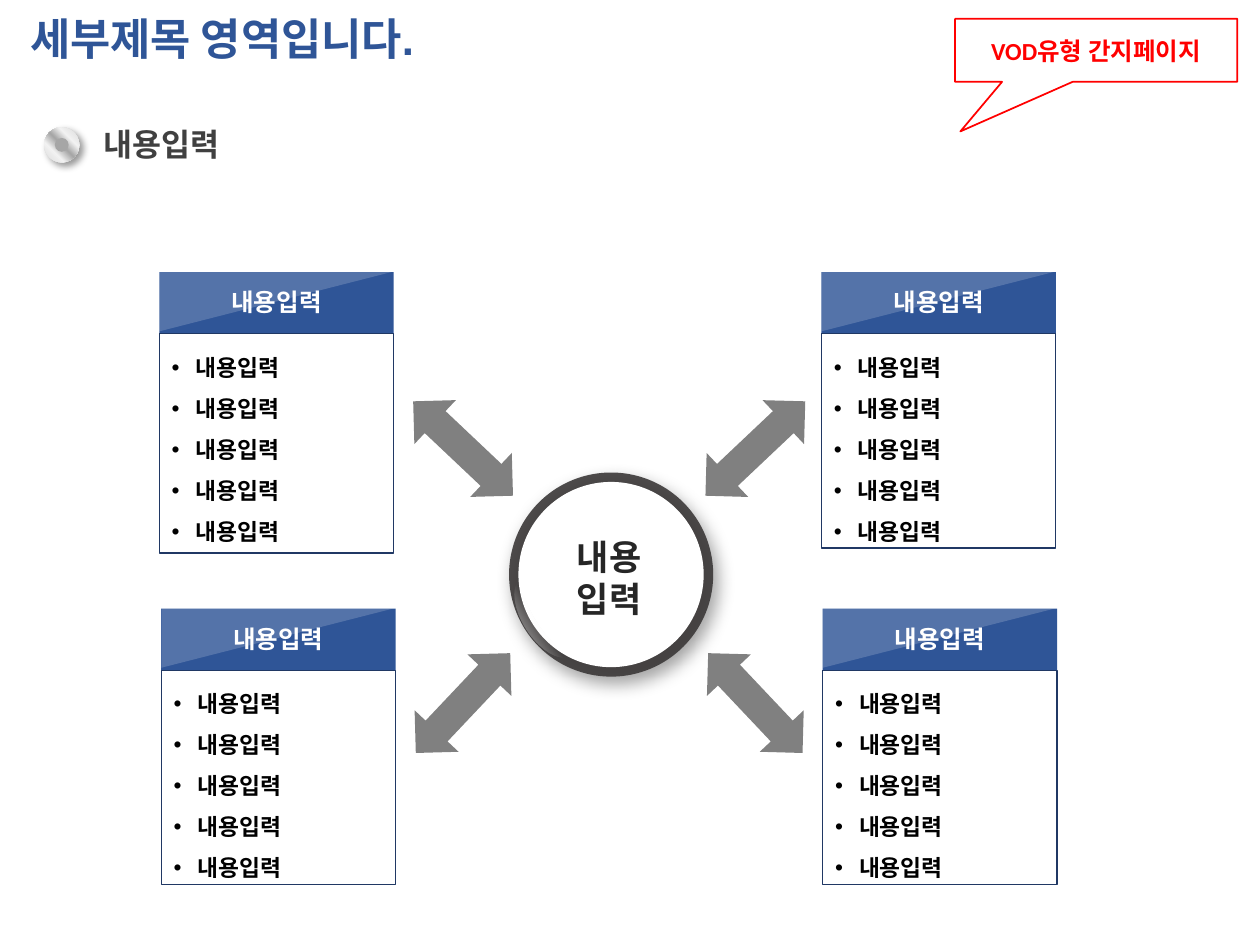
import pptx
import pptx.util
import pptx.dml.color
import pptx.enum.shapes
import pptx.enum.text
import pptx.oxml
import pptx.oxml.ns
from lxml import etree

SHAPE = pptx.enum.shapes.MSO_SHAPE
ALIGN = pptx.enum.text.PP_ALIGN
ANCHOR = pptx.enum.text.MSO_ANCHOR
qn = pptx.oxml.ns.qn
NSDECL = pptx.oxml.ns.nsdecls("a")

prs = pptx.Presentation()
prs.slide_width = pptx.util.Inches(10)
prs.slide_height = pptx.util.Inches(7.5)
COL = prs.slide_width / 100
ROW = prs.slide_height / 75

NAVY, GREY, WHITE = "2F5597", "808080", "FFFFFF"
LABEL = "내용입력"


def color(value):
    return pptx.dml.color.RGBColor.from_string(value)


def place(box):
    """Turn a box in grid columns and rows into slide lengths."""
    x, y, w, h = box
    return round(x * COL), round(y * ROW), round(w * COL), round(h * ROW)


def add_shape(s, kind, box, fill=None, line=None, width=1, alpha=None, rotation=0):
    sp = s.shapes.add_shape(kind, *place(box))
    sp.shadow.inherit = False
    sp.rotation = rotation
    if fill:
        sp.fill.solid()
        sp.fill.fore_color.rgb = color(fill)
    if alpha is not None:
        clr = sp.fill._xPr.find(qn("a:solidFill"))[0]
        etree.SubElement(clr, qn("a:alpha")).set("val", str(alpha * 1000))
    if line:
        sp.line.color.rgb = color(line)
        sp.line.width = pptx.util.Pt(width)
    else:
        sp.line.fill.background()
    return sp


def gradient(sp, stops, angle):
    """Fill with (position, colour, opacity) stops, all in percent."""
    gs = "".join(
        f'<a:gs pos="{pos * 1000}"><a:srgbClr val="{c}"><a:alpha val="{a * 1000}"/>'
        "</a:srgbClr></a:gs>" for pos, c, a in stops)
    new = pptx.oxml.parse_xml(
        f'<a:gradFill {NSDECL} rotWithShape="1"><a:gsLst>{gs}</a:gsLst>'
        f'<a:lin ang="{angle * 60000}" scaled="0"/></a:gradFill>')
    sp._element.spPr.find(qn("a:prstGeom")).addnext(new)


def drop_shadow(sp, blur, distance, angle):
    effects = sp._element.spPr.find(qn("a:effectLst"))
    effects.append(pptx.oxml.parse_xml(
        f'<a:outerShdw {NSDECL} blurRad="{blur * 12700}" dist="{distance * 12700}" '
        f'dir="{angle * 60000}" algn="ctr" rotWithShape="0"><a:srgbClr val="000000">'
        '<a:alpha val="40000"/></a:srgbClr></a:outerShdw>'))


def write(sp, lines, size, name, ink, anchor=ANCHOR.TOP, wrap=True, bullet=False, **formats):
    tf = sp.text_frame
    tf.word_wrap = wrap
    tf.auto_size = pptx.enum.text.MSO_AUTO_SIZE.NONE
    tf.vertical_anchor = anchor
    font = {"size": pptx.util.Pt(size), "name": name, "bold": True}
    for i, text in enumerate(lines):
        p = tf.paragraphs[0] if i == 0 else tf.add_paragraph()
        for key, value in formats.items():
            setattr(p, key, value)
        if bullet:
            pPr = p._p.get_or_add_pPr()
            indent = pptx.util.Inches(0.19)
            pPr.set("marL", str(indent))
            pPr.set("indent", str(-indent))
            etree.SubElement(pPr, qn("a:buFont")).set("typeface", "Arial")
            etree.SubElement(pPr, qn("a:buChar")).set("char", "•")
        r = p.add_run()
        r.text = text
        for key, value in font.items():
            setattr(r.font, key, value)
        r.font.color.rgb = color(ink)


def add_text(s, box, *args, **formats):
    write(s.shapes.add_textbox(*place(box)), *args, **formats)


def title(s, box):
    sp = s.shapes.title
    sp.left, sp.top, sp.width, sp.height = place(box)
    write(sp, ["세부제목 영역입니다."], 25, "Arial", NAVY, anchor=ANCHOR.MIDDLE,
          alignment=ALIGN.LEFT, line_spacing=0.9)


def hub(s, box):
    x, y, w, h = box
    ring = add_shape(s, SHAPE.OVAL, box, "3B3838", alpha=90)
    drop_shadow(ring, 10, 5, 60)
    rim = 0.75
    add_shape(s, SHAPE.OVAL, (x + rim, y + rim, w - 2 * rim, h - 2 * rim), WHITE)
    moon = add_shape(s, SHAPE.MOON, (x + 1.2, y + 8.3, 1.9, 7.3), rotation=327.5)
    moon.adjustments[0] = 0.535
    gradient(moon, [(0, WHITE, 100), (54, WHITE, 0)], 0)
    add_text(s, (x + 1.1, y + 4.5, w - 2.5, 7.7), ["내용", "입력"], 20, "Arial", "262626",
             alignment=ALIGN.CENTER)


def card(s, box):
    """Header bar with a diagonal gloss over a bulleted list."""
    x, y, w, h = box
    head = 4.9
    add_shape(s, SHAPE.RECTANGLE, (x, y, w, head), NAVY)
    long, short = w - 0.2, head - 0.2
    add_shape(s, SHAPE.RIGHT_TRIANGLE,
              (x + (long - short) / 2, y + (short - long) / 2, short, long),
              WHITE, alpha=18, rotation=90)
    add_text(s, (x - 0.2, y + 0.7, w + 0.4, 3.4), [LABEL], 14, "Calibri", WHITE,
             alignment=ALIGN.CENTER, space_after=pptx.util.Pt(6))
    body = add_shape(s, SHAPE.RECTANGLE, (x, y + head, w, h - head), WHITE, "203864", 0.75)
    write(body, [LABEL] * 5, 13, "Arial", "000000", bullet=True,
          alignment=ALIGN.LEFT, line_spacing=1.5)


def arrows(s, box):
    """Four double arrows in the corners of the box, pointing at its middle."""
    x, y, w, h = box
    long, thick = 10.9, 4.8
    for dx, dy, angle in ((0, 0, 43.4), (1, 0, -43.4), (0, 1, -46.6), (1, 1, 46.6)):
        add_shape(s, SHAPE.LEFT_RIGHT_ARROW,
                  (x + dx * (w - long), y + dy * (h - thick), long, thick),
                  GREY, rotation=angle)


def section_heading(s, box):
    x, y, w, h = box
    disc = add_shape(s, SHAPE.OVAL, (x, y + 0.7, 2.8, 2.8))
    gradient(disc, [(0, "D9D9D9", 100), (30, "F2F2F2", 100), (50, "A6A6A6", 100),
                    (70, "F2F2F2", 100), (100, "D9D9D9", 100)], 315)
    drop_shadow(disc, 4, 3, 45)
    add_shape(s, SHAPE.OVAL, (x + 0.85, y + 1.55, 1.1, 1.1), "A6A6A6")
    add_text(s, (x + 3.7, y, w - 3.7, h), [LABEL], 18, "Arial", "404040", wrap=False)


def callout(s, box):
    sp = add_shape(s, SHAPE.RECTANGULAR_CALLOUT, box, WHITE, "FF0000", 1)
    sp.adjustments[0], sp.adjustments[1] = -0.481, 1.287
    write(sp, ["VOD유형 간지페이지"], 14, "Calibri", "FF0000", anchor=ANCHOR.MIDDLE,
          alignment=ALIGN.CENTER)


def main():
    s = prs.slides.add_slide(prs.slide_layouts[5])
    title(s, (1.4, 0.8, 75.7, 4.9))
    hub(s, (40.4, 37.5, 16.2, 16.2))
    for x, y, h in ((12.65, 21.6, 22.3), (65.2, 21.6, 21.9),
                    (12.8, 48.3, 21.9), (65.3, 48.3, 21.9)):
        card(s, (x, y, 18.6, h))
    arrows(s, (31.3, 33.2, 34.1, 25))
    section_heading(s, (3.5, 9.4, 15.8, 4))
    callout(s, (75.8, 1.5, 22.4, 5))
    prs.save("out.pptx")


if __name__ == "__main__":
    main()
